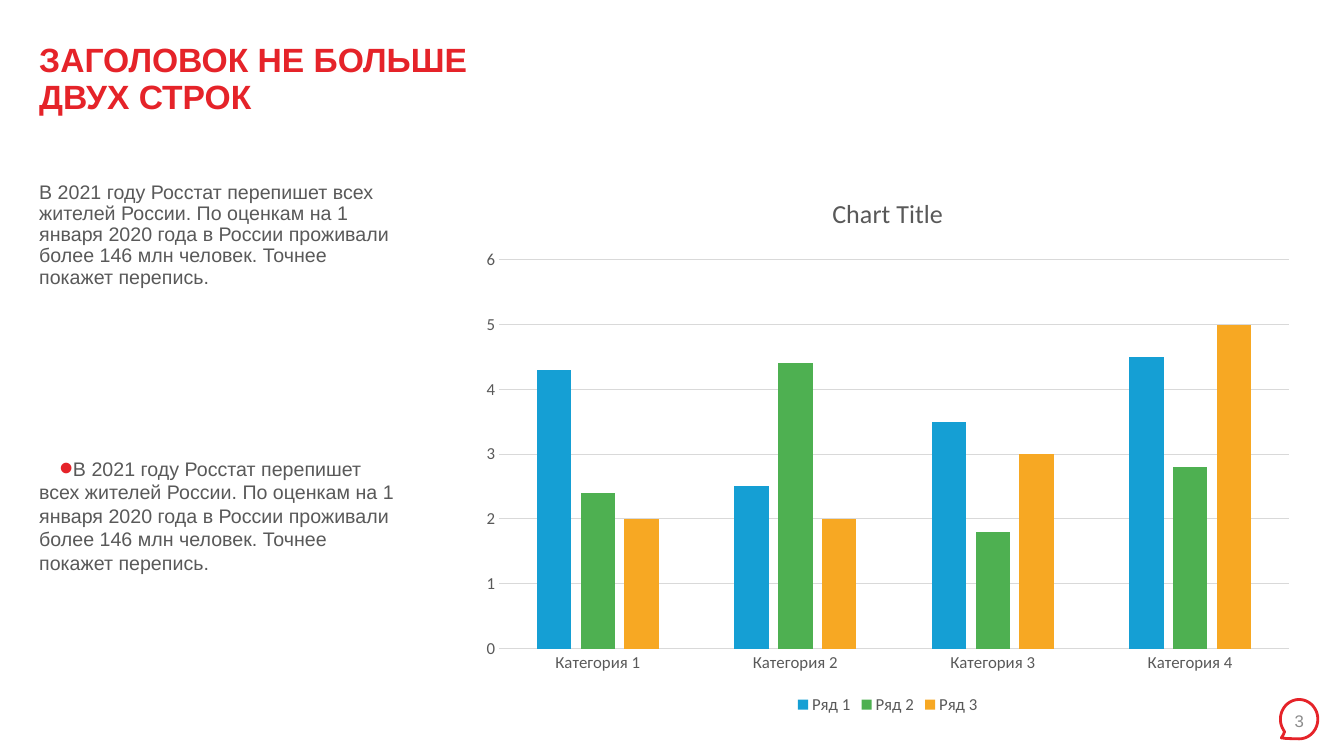
from dataclasses import dataclass
from math import cos, radians, sin

from lxml import etree
from pptx import Presentation
from pptx.chart.data import CategoryChartData
from pptx.dml.color import RGBColor
from pptx.enum.chart import XL_CHART_TYPE, XL_LEGEND_POSITION, XL_TICK_MARK
from pptx.enum.text import MSO_ANCHOR, PP_ALIGN
from pptx.oxml.ns import qn
from pptx.util import Inches, Pt

COLUMNS = XL_CHART_TYPE.COLUMN_CLUSTERED
BOTTOM = XL_LEGEND_POSITION.BOTTOM
NO_TICK = XL_TICK_MARK.NONE
TOP, MIDDLE = MSO_ANCHOR.TOP, MSO_ANCHOR.MIDDLE
LEFT, RIGHT = PP_ALIGN.LEFT, PP_ALIGN.RIGHT

WIDTH, HEIGHT = Inches(13.33), Inches(7.5)
MARGIN, TEXT_WIDTH, TEXT_HEIGHT = 2.18, 28.36, 35.47

TITLE = ["ЗАГОЛОВОК НЕ БОЛЬШЕ", "ДВУХ СТРОК"]
CENSUS = ["В 2021 году Росстат перепишет всех жителей России. "
          "По оценкам на 1 января 2020 года в России проживали "
          "более 146 млн человек. Точнее покажет перепись."]
CATEGORIES = [f"Категория {n}" for n in range(1, 5)]
SERIES = {
    "Ряд 1": (4.3, 2.5, 3.5, 4.5),
    "Ряд 2": (2.4, 4.4, 1.8, 2.8),
    "Ряд 3": (2, 2, 3, 5),
}


@dataclass(frozen=True)
class Theme:
    font: str = "Arial"
    chart_font: str = "Calibri"
    accent: str = "E52329"
    text: str = "595959"
    number: str = "8C8C8C"
    grid: str = "D9D9D9"
    series: tuple = ("159FD4", "4EB051", "F7A823")
    title_size: float = 24
    body_size: float = 14
    number_size: float = 12
    chart_title_size: float = 18.6
    chart_size: float = 12


THEME = Theme()


def rgb(color):
    return RGBColor.from_string(color)


def across(share):
    return round(WIDTH * share / 100)


def down(share):
    return round(HEIGHT * share / 100)


def box(x, y, w, h):
    return across(x), down(y), across(w), down(h)


def style_font(font, name, size, color, bold=False):
    font.name, font.size, font.bold = name, Pt(size), bold
    font.color.rgb = rgb(color)


def add_bullet(p):
    pPr = p._p.get_or_add_pPr()
    pPr.set("marL", "0")
    pPr.set("indent", str(Inches(0.2)))
    color = etree.SubElement(pPr, qn("a:buClr"))
    etree.SubElement(color, qn("a:srgbClr"), val=THEME.accent)
    etree.SubElement(pPr, qn("a:buSzPct"), val="200000")
    etree.SubElement(pPr, qn("a:buFont"), typeface=THEME.font)
    etree.SubElement(pPr, qn("a:buChar"), char="•")


def add_text(s, place, lines, size, color, bold=False, anchor=TOP,
             align=LEFT, spacing=1.0, bullet=False):
    tf = s.shapes.add_textbox(*place).text_frame
    tf.word_wrap = True
    tf.vertical_anchor = anchor
    p = tf.paragraphs[0]
    p.alignment, p.line_spacing = align, spacing
    if bullet:
        add_bullet(p)
    for i, line in enumerate(lines):
        if i:
            p.add_line_break()
        r = p.add_run()
        r.text = line
        style_font(r.font, THEME.font, size, color, bold)


def add_bubble(s, cx, cy, rx, ry):
    arc = [(across(cx + rx * cos(radians(a))), down(cy + ry * sin(radians(a))))
           for a in range(154, 451, 4)]
    tail = [(-0.4, 0.99), (-0.7, 0.98), (-0.95, 0.95), (-0.85, 0.8), (-0.78, 0.64)]
    points = arc + [(across(cx + rx * x), down(cy + ry * y)) for x, y in tail]
    builder = s.shapes.build_freeform(*points[0])
    builder.add_line_segments(points[1:], close=True)
    sp = builder.convert_to_shape()
    sp.shadow.inherit = False
    sp.fill.background()
    sp.line.color.rgb = rgb(THEME.accent)
    sp.line.width = Pt(2)


def style_axis(axis):
    axis.major_tick_mark = axis.minor_tick_mark = NO_TICK
    style_font(axis.tick_labels.font, THEME.chart_font, THEME.chart_size, THEME.text)


def style_line(line):
    line.color.rgb = rgb(THEME.grid)
    line.width = Pt(0.75)


def add_column_chart(s, place, title):
    data = CategoryChartData()
    data.categories = CATEGORIES
    for name, values in SERIES.items():
        data.add_series(name, values)
    chart = s.shapes.add_chart(COLUMNS, *place, data).chart
    style_font(chart.font, THEME.chart_font, THEME.chart_size, THEME.text)

    chart.has_title = True
    r = chart.chart_title.text_frame.paragraphs[0].add_run()
    r.text = title
    style_font(r.font, THEME.chart_font, THEME.chart_title_size, THEME.text)
    chart.chart_title.include_in_layout = False

    chart.has_legend = True
    chart.legend.position = BOTTOM
    chart.legend.include_in_layout = False
    style_font(chart.legend.font, THEME.chart_font, THEME.chart_size, THEME.text)

    style_axis(chart.category_axis)
    style_line(chart.category_axis.format.line)
    values = chart.value_axis
    style_axis(values)
    values.minimum_scale, values.maximum_scale, values.major_unit = 0, 6, 1
    values.format.line.fill.background()
    values.has_major_gridlines = True
    style_line(values.major_gridlines.format.line)

    plot = chart.plots[0]
    plot.gap_width, plot.overlap, plot.vary_by_categories = 219, -27, False
    for series, color in zip(plot.series, THEME.series):
        series.format.fill.solid()
        series.format.fill.fore_color.rgb = rgb(color)


def main():
    prs = Presentation()
    prs.slide_width, prs.slide_height = WIDTH, HEIGHT
    s = prs.slides.add_slide(prs.slide_layouts[6])

    add_bubble(s, 96.66, 95.13, 1.39, 2.6)
    add_text(s, box(MARGIN, 3.07, 81.55, 15.07), TITLE, THEME.title_size,
             THEME.accent, bold=True, anchor=MIDDLE, spacing=0.9)
    add_text(s, box(MARGIN, 23.47, TEXT_WIDTH, TEXT_HEIGHT), CENSUS,
             THEME.body_size, THEME.text, spacing=0.9)
    add_text(s, box(MARGIN, 59.73, TEXT_WIDTH, TEXT_HEIGHT), CENSUS,
             THEME.body_size, THEME.text, bullet=True)
    add_text(s, box(75.24, 92.67, 22.51, 5.33), ["3"], THEME.number_size,
             THEME.number, anchor=MIDDLE, align=RIGHT)
    add_column_chart(s, box(34.96, 23.07, 62.19, 72), "Chart Title")

    prs.save("out.pptx")


if __name__ == "__main__":
    main()
